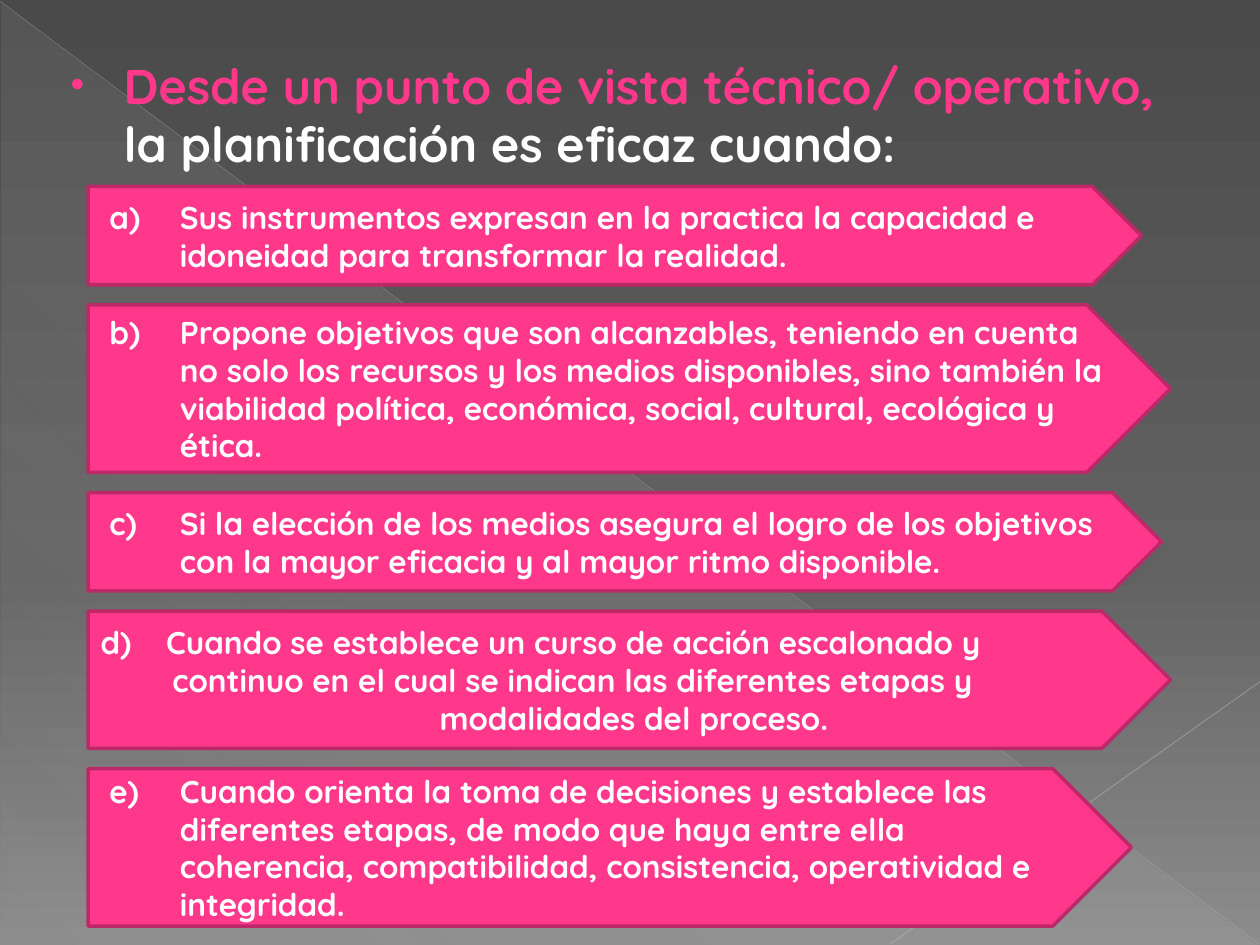
from lxml.etree import SubElement
from pptx import Presentation
from pptx.dml.color import RGBColor
from pptx.enum.shapes import MSO_CONNECTOR, MSO_SHAPE
from pptx.enum.text import MSO_ANCHOR, MSO_AUTO_SIZE, PP_ALIGN
from pptx.oxml.ns import qn
from pptx.util import Inches, Pt

PINK = RGBColor(0xFF, 0x38, 0x8C)
DARK_PINK = RGBColor(0xBD, 0x29, 0x68)
WHITE = RGBColor(0xFF, 0xFF, 0xFF)
SILVER = RGBColor(0xBF, 0xBF, 0xBF)
PALE_GREY = RGBColor(0xC6, 0xC6, 0xC6)
MIST = RGBColor(0xD2, 0xD2, 0xD2)
CHARCOAL = RGBColor(0x4A, 0x4A, 0x4A)
SLATE = RGBColor(0x62, 0x62, 0x62)
ASH = RGBColor(0x8C, 0x8C, 0x8C)

prs = Presentation()
prs.slide_width, prs.slide_height = Inches(10), Inches(7.5)
slide = prs.slides.add_slide(prs.slide_layouts[1])
heading = slide.placeholders[1]
title = slide.shapes.title.element
title.getparent().remove(title)


def set_gradient(holder, stops, angle):
    """Turn the solid fill of holder into a gradient of (position, colour, opacity)."""
    solid = holder.find(qn("a:solidFill"))
    gradient = solid.makeelement(qn("a:gradFill"), {"rotWithShape": "1"})
    holder.replace(solid, gradient)
    stop_list = SubElement(gradient, qn("a:gsLst"))
    for position, color, opacity in stops:
        stop = SubElement(stop_list, qn("a:gs"), pos=str(position * 1000))
        rgb = SubElement(stop, qn("a:srgbClr"), val=str(color))
        if opacity < 100:
            SubElement(rgb, qn("a:alpha"), val=str(opacity * 1000))
    SubElement(gradient, qn("a:lin"), ang=str(angle * 60000), scaled="0")


def set_indent(paragraph, margin, hanging, bullet, **bullet_values):
    """Indent a paragraph in inches and give it a bullet element."""
    properties = paragraph._p.get_or_add_pPr()
    properties.set("marL", str(Inches(margin)))
    properties.set("indent", str(Inches(-hanging)))
    SubElement(properties, qn(bullet), **bullet_values)


# Background: grey gradient, translucent triangle and two thin diagonals
slide.background.fill.solid()
set_gradient(slide.element.xpath(".//p:bgPr")[0],
             [(0, CHARCOAL, 100), (60, SLATE, 100), (100, ASH, 100)], 90)

wedge = slide.shapes.add_shape(MSO_SHAPE.RIGHT_TRIANGLE, Inches(0.01), Inches(0.02),
                               Inches(9.98), Inches(7.48))
wedge.shadow.inherit = False
wedge.line.fill.background()
wedge.fill.solid()
set_gradient(wedge.element.spPr, [(0, MIST, 10), (70, MIST, 8), (100, MIST, 1)], 133)

diagonals = [
    ((0, 0.01, 9.99, 7.49), SILVER, 0.39, 35),
    ((10, 5.41, 7.07, 7.49), PALE_GREY, 0.47, 45),
]
for ends, color, weight, opacity in diagonals:
    diagonal = slide.shapes.add_connector(MSO_CONNECTOR.STRAIGHT, *map(Inches, ends))
    diagonal.line.color.rgb = color
    diagonal.line.width = Pt(weight)
    rgb = diagonal.element.spPr.find(".//" + qn("a:srgbClr"))
    SubElement(rgb, qn("a:alpha"), val=str(opacity * 1000))
    SubElement(diagonal.element.spPr, qn("a:effectLst"))

# Heading, brought in front of the background
slide.shapes.element.append(heading.element)
heading.left, heading.top = Inches(0.39), Inches(0.39)
heading.width, heading.height = Inches(9.06), Inches(1.17)
heading.text_frame.word_wrap = True
heading.text_frame.auto_size = MSO_AUTO_SIZE.NONE
heading.text_frame.vertical_anchor = MSO_ANCHOR.TOP
sentence = heading.text_frame.paragraphs[0]
sentence.space_before = Pt(0)
bullet_color = SubElement(sentence._p.get_or_add_pPr(), qn("a:buClr"))
SubElement(bullet_color, qn("a:srgbClr"), val=str(PINK))
SubElement(sentence._p.pPr, qn("a:buSzPct"), val="80000")
set_indent(sentence, 0.49, 0.42, "a:buChar", char="•")
heading_format = {"name": "Quicksand", "size": Pt(27.8), "bold": True}
for words, color in [("Desde un punto de vista técnico/ operativo, ", PINK),
                     ("la planificación es eficaz cuando:", WHITE)]:
    run = sentence.add_run()
    run.text = words
    run.font.color.rgb = color
    for key, value in heading_format.items():
        setattr(run.font, key, value)

# Criteria a) to e): width, height and lines as (text, margin, hanging)
criteria = [
    (8.36, 0.78, [("Sus instrumentos expresan en la practica la capacidad e idoneidad "
                   "para transformar la realidad.", 0.63, 0.56)]),
    (8.59, 1.33, [("Propone objetivos que son alcanzables, teniendo en cuenta no solo los "
                   "recursos y los medios disponibles, sino también la viabilidad política, "
                   "económica, social, cultural, ecológica y ética.", 0.63, 0.56)]),
    (8.52, 0.78, [("Si la elección de los medios asegura el logro de los objetivos con la "
                   "mayor eficacia y al mayor ritmo disponible.", 0.63, 0.56)]),
    (8.59, 1.09, [("Cuando se establece un curso de acción escalonado y", 0.52, 0.52),
                  ("continuo en el cual se indican las diferentes etapas y", 0.57, 0),
                  ("modalidades del proceso.", 2.69, 0)]),
    (8.28, 1.25, [("Cuando orienta la toma de decisiones y establece las diferentes etapas, "
                   "de modo que haya entre ella coherencia, compatibilidad, consistencia, "
                   "operatividad e integridad.", 0.63, 0.56)]),
]
criterion_format = {"name": "Quicksand", "size": Pt(18), "bold": True}
LEFT, GAP = 0.7, 0.16
top = 1.48
for number, (width, height, lines) in enumerate(criteria, start=1):
    arrow = slide.shapes.add_shape(MSO_SHAPE.PENTAGON, Inches(LEFT), Inches(top),
                                   Inches(width), Inches(height))
    arrow.shadow.inherit = False
    arrow.fill.solid()
    arrow.fill.fore_color.rgb = PINK
    arrow.line.color.rgb = DARK_PINK
    arrow.line.width = Pt(2)
    frame = arrow.text_frame
    frame.word_wrap = True
    frame.vertical_anchor = MSO_ANCHOR.MIDDLE
    for position, (words, margin, hanging) in enumerate(lines):
        line = frame.add_paragraph() if position else frame.paragraphs[0]
        line.alignment = PP_ALIGN.LEFT
        if position:
            set_indent(line, margin, hanging, "a:buNone")
        else:
            set_indent(line, margin, hanging, "a:buAutoNum",
                       type="alphaLcParenR", startAt=str(number))
        run = line.add_run()
        run.text = words
        run.font.color.rgb = WHITE
        for key, value in criterion_format.items():
            setattr(run.font, key, value)
    top += height + GAP

prs.save("out.pptx")
